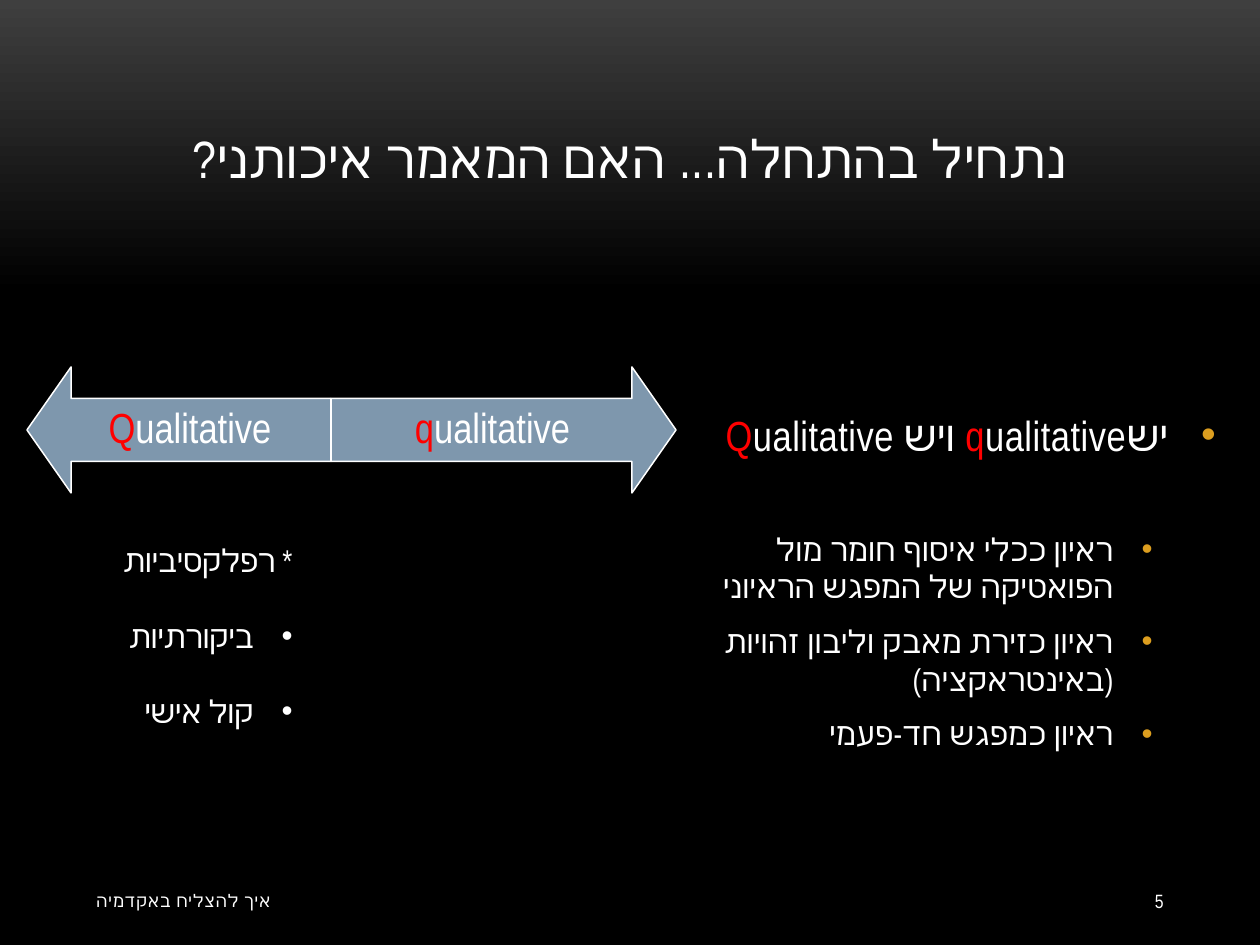
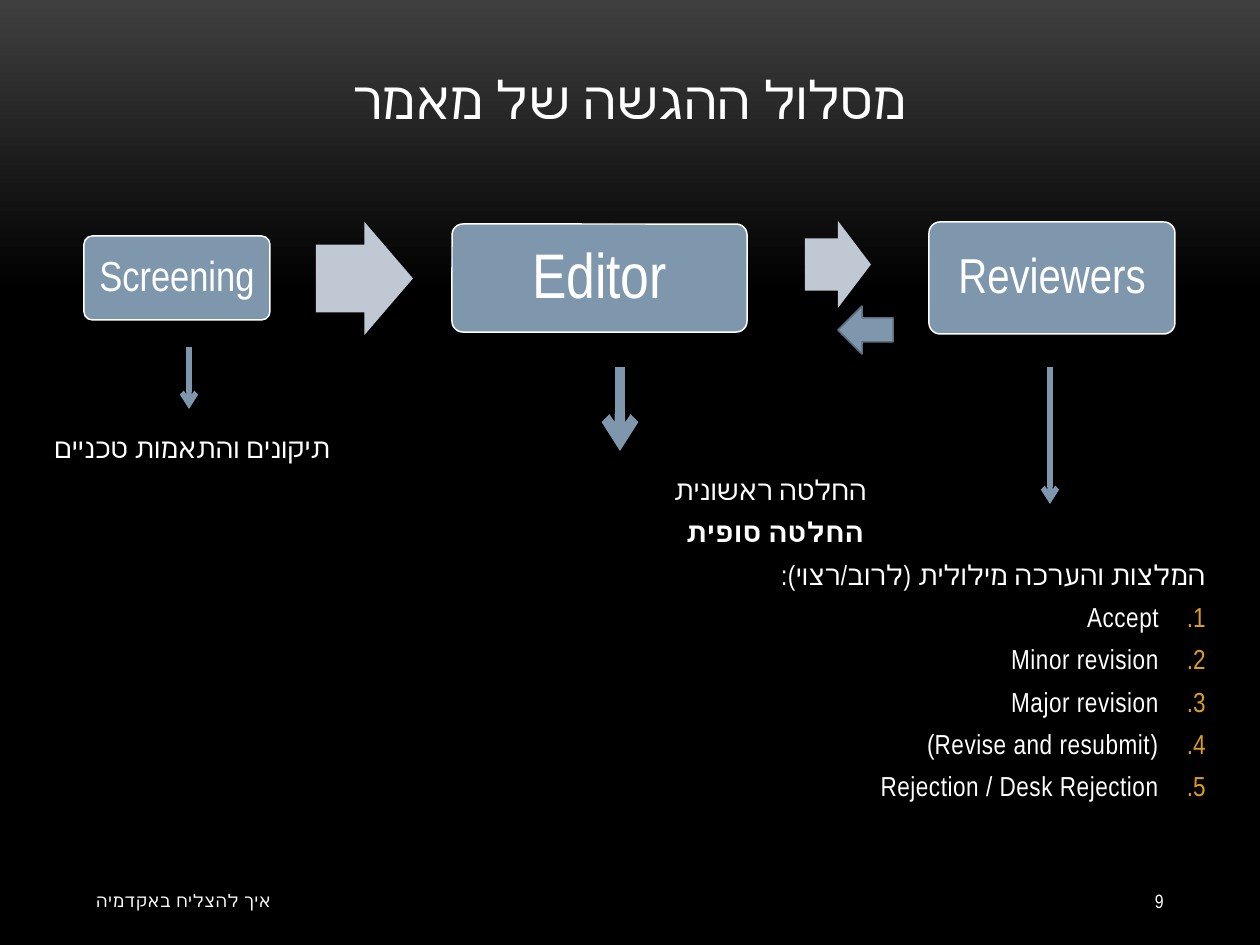
"""Build two dark Hebrew slides on qualitative articles and the route of a submission."""
import copy
from dataclasses import dataclass

from lxml import etree
from pptx import Presentation
from pptx import util as u
from pptx.dml.color import RGBColor
from pptx.enum import shapes, text
from pptx.oxml.ns import qn


@dataclass(frozen=True)
class Theme:
    font: str = "Arial Narrow"
    white: str = "FFFFFF"
    red: str = "FF0000"
    gold: str = "DC9E1F"
    blue: str = "7E97AD"
    blue_dark: str = "5D7080"
    blue_pale: str = "C0C9D3"
    top: str = "3F3F3F"
    black: str = "000000"
    title: float = 30
    lead: float = 24
    item: float = 18
    step: float = 15.7
    page: float = 11
    footer: float = 10
    outline: float = 0.85


T = Theme()
PX = 914400 / 126
MSO, AL, ANCHOR = shapes.MSO_SHAPE, text.PP_ALIGN, text.MSO_ANCHOR


def add_box(s, x, y, w, h, kind=None, fill=T.blue, line=T.white, adj=(), anchor=ANCHOR.MIDDLE):
    """Add a text box, or a preset shape when kind is given."""
    at = [round(v * PX) for v in (x, y, w, h)]
    if kind is None:
        sp = s.shapes.add_textbox(*at)
    else:
        sp = s.shapes.add_shape(kind, *at)
        sp.shadow.inherit = False
        sp.fill.solid()
        sp.fill.fore_color.rgb = RGBColor.from_string(fill)
        if line:
            sp.line.color.rgb = RGBColor.from_string(line)
            sp.line.width = u.Pt(T.outline)
        else:
            sp.line.fill.background()
        for i, value in enumerate(adj):
            sp.adjustments[i] = value
    tf = sp.text_frame
    tf.word_wrap = kind is None
    tf.vertical_anchor = anchor
    return tf


def add_text(tf, content, size, align=AL.RIGHT, rtl=True, bold=False, spc=0, margin=0, hang=0,
             bullet=None, bullet_color=None, before=0, after=0, leading=None):
    """Add a paragraph; content is a string or a list of (string, colour) runs."""
    p = tf.paragraphs[0]
    if p.runs:
        p = tf.add_paragraph()
        p.space_before = u.Pt(before)
    p.alignment = align
    p.space_after = u.Pt(after)
    if leading:
        p.line_spacing = leading
    pPr = p._p.get_or_add_pPr()
    pPr.set("rtl", str(int(rtl)))
    pPr.set("marL", str(round(margin * PX)))
    pPr.set("indent", str(round(-hang * PX)))
    if bullet:
        if bullet_color:
            clr = etree.SubElement(pPr, qn("a:buClr"))
            etree.SubElement(clr, qn("a:srgbClr"), val=bullet_color)
        if bullet == "1.":
            etree.SubElement(pPr, qn("a:buAutoNum"), type="arabicPeriod")
        else:
            etree.SubElement(pPr, qn("a:buFont"), typeface="Arial")
            etree.SubElement(pPr, qn("a:buChar"), char=bullet)
    for words, color in [(content, T.white)] if isinstance(content, str) else content:
        r = p.add_run()
        r.text = words
        r.font.size = u.Pt(size)
        r.font.bold = bold
        r.font.name = T.font
        r.font.color.rgb = RGBColor.from_string(color)
        rPr = r._r.get_or_add_rPr()
        rPr.set("spc", str(spc))
        etree.SubElement(rPr, qn("a:cs"), typeface=T.font)


prs = Presentation()
prs.slide_width, prs.slide_height = round(1260 * PX), round(945 * PX)

slides = []
for title, title_bottom, page in [
    ("נתחיל בהתחלה... האם המאמר איכותני?", 195, "5"),
    ("מסלול ההגשה של מאמר", 136, "9"),
]:
    s = prs.slides.add_slide(prs.slide_layouts[6])
    fill = s.background.fill
    fill.gradient()
    fill.gradient_angle = 270
    for stop, color, position in zip(fill.gradient_stops, (T.top, T.black), (0, 0.31)):
        stop.color.rgb = RGBColor.from_string(color)
        stop.position = position
    stops = s.element.find(".//" + qn("a:gsLst"))
    last = copy.deepcopy(stops[-1])
    last.set("pos", "100000")
    stops.append(last)

    tf = add_box(s, 84, 0, 1092, title_bottom, anchor=ANCHOR.BOTTOM)
    add_text(tf, title, T.title, align=AL.CENTER, spc=50)
    add_text(add_box(s, 84, 876, 399, 50), "איך להצליח באקדמיה", T.footer, align=AL.LEFT, rtl=False, spc=60)
    add_text(add_box(s, 1040, 876, 136, 50), page, T.page, rtl=False)
    slides.append(s)

s = slides[0]
for kind, x, w, initial in [(MSO.LEFT_ARROW, 27, 304, "Q"), (MSO.RIGHT_ARROW, 331, 345, "q")]:
    tf = add_box(s, x, 367, w, 126, kind, adj=(0.5, 0.35))
    add_text(tf, [(initial, T.red), ("ualitative", T.white)], T.lead, align=AL.CENTER, rtl=False, leading=0.9)

tf = add_box(s, 651, 403, 577, 400, anchor=ANCHOR.TOP)
lead = [("יש", T.white), ("q", T.red), ("ualitative ויש ", T.white), ("Q", T.red), ("ualitative", T.white)]
add_text(tf, lead, T.lead, spc=30, margin=47, hang=47, bullet="•", bullet_color=T.gold, after=6)
for item, before in [
    ("ראיון ככלי איסוף חומר מול הפואטיקה של המפגש הראיוני", 34),
    ("ראיון כזירת מאבק וליבון זהויות (באינטראקציה)", 3.6),
    ("ראיון כמפגש חד-פעמי", 3.6),
]:
    add_text(tf, item, T.item, spc=30, margin=102, hang=39, bullet="•", bullet_color=T.gold,
             before=before, after=6)

tf = add_box(s, 0, 535, 368, 242, anchor=ANCHOR.TOP)
add_text(tf, "* רפלקסיביות", T.item, margin=63)
for item in ("ביקורתיות", "קול אישי"):
    add_text(tf, item, T.item, margin=102, hang=39, bullet="•", before=21.5)

s = slides[1]
row_middle = 278
for name, x, w, h, size in [
    ("Screening", 84, 186, 84, 24),
    ("Editor", 452, 295, 108, 36),
    ("Reviewers", 929, 246, 112, 28),
]:
    tf = add_box(s, x, row_middle - h // 2, w, h, MSO.ROUNDED_RECTANGLE, adj=(0.1,))
    add_text(tf, name, size, align=AL.CENTER, rtl=False, leading=0.9)

for x, y, w, h in [(316, 222, 97, 113), (805, 221, 66, 87)]:
    add_box(s, x, y, w, h, MSO.RIGHT_ARROW, fill=T.blue_pale, line=None, adj=(0.6, 0.5))
add_box(s, 838, 306, 55, 48, MSO.LEFT_ARROW, line=T.blue_dark)

for x, top, bottom, width in [(189, 347, 409, 3), (620, 367, 451, 6), (1050, 367, 504, 3)]:
    cn = s.shapes.add_connector(shapes.MSO_CONNECTOR.STRAIGHT, *[round(v * PX) for v in (x, top, x, bottom)])
    cn.line.color.rgb = RGBColor.from_string(T.blue)
    cn.line.width = u.Pt(width)
    etree.SubElement(cn.line._get_or_add_ln(), qn("a:tailEnd"), type="arrow")
    etree.SubElement(cn._element.spPr, qn("a:effectLst"))

tf = add_box(s, 42, 431, 1176, 399, anchor=ANCHOR.TOP)
spacing = dict(spc=30, before=3.1, after=6, leading=0.8)
add_text(tf, "תיקונים והתאמות טכניים", T.step, align=AL.LEFT, rtl=False, **spacing)
add_text(tf, "החלטה ראשונית", T.step, margin=339, **spacing)
add_text(tf, "החלטה סופית", T.step, margin=342, bold=True, **spacing)
add_text(tf, "המלצות והערכה מילולית (לרוב/רצוי):", T.step, **spacing)
for verdict in ("Accept", "Minor revision", "Major revision", "(Revise and resubmit)",
                "Rejection / Desk Rejection"):
    add_text(tf, verdict, T.step, margin=47, hang=47, bullet="1.", bullet_color=T.gold, **spacing)

prs.save("out.pptx")
